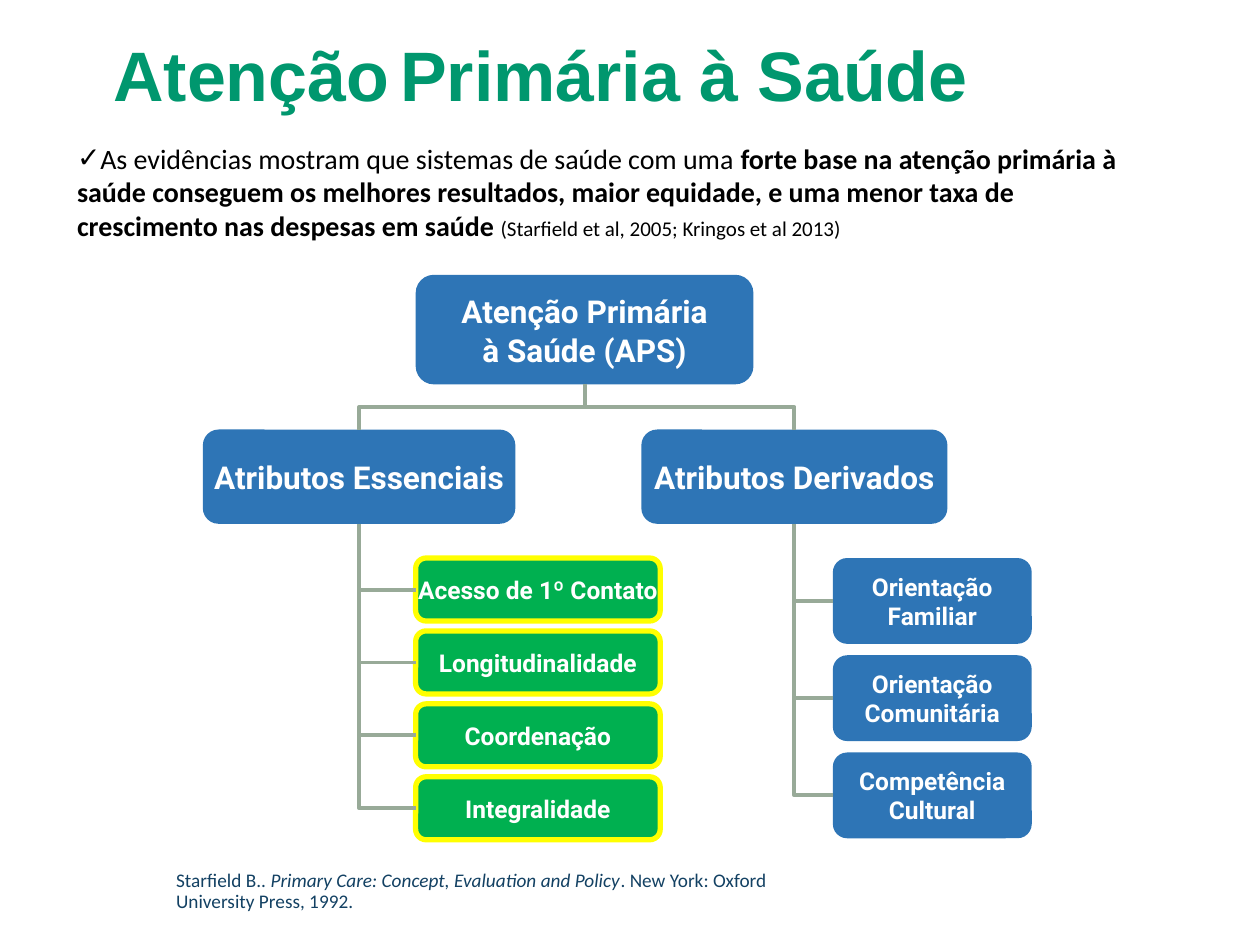
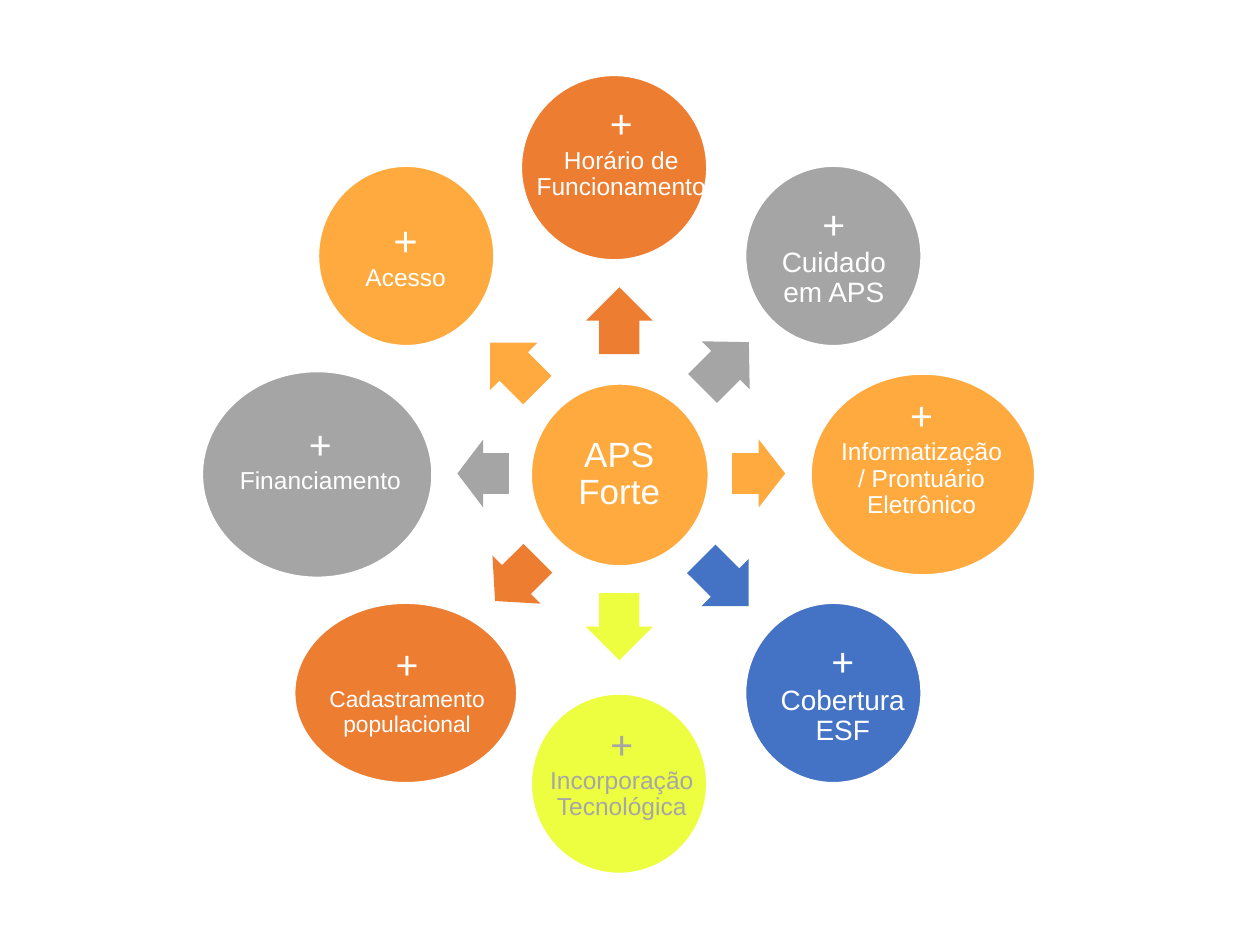
from dataclasses import dataclass
from typing import Any, NamedTuple

from lxml import etree
from pptx import Presentation
from pptx import util as u
from pptx.dml.color import RGBColor
from pptx.enum import shapes, text
from pptx.oxml import ns

COLORS = {
    "green_title": "00976E",
    "blue_box": "2E75B6",
    "green_box": "00B050",
    "yellow_line": "FFFF00",
    "branch": "98AA98",
    "citation": "134163",
    "black": "000000",
    "white": "FFFFFF",
    "amber": "FFAA3F",
    "orange": "ED7D31",
    "gray": "A5A5A5",
    "blue": "4472C4",
    "lime": "EDFD40",
    "gray_text": "A6A6A6",
}
CENTER = {"alignment": text.PP_ALIGN.CENTER}
TIGHT_CENTER = {**CENTER, "line_spacing": 0.9}


class Box(NamedTuple):
    left: float
    top: float
    width: float
    height: float

    def lengths(self) -> list[u.Length]:
        return [u.Cm(value) for value in self]


class Style(NamedTuple):
    size: float
    name: str
    color: str = "white"
    bold: bool = False
    italic: bool = False


class Run(NamedTuple):
    words: str
    style: Style


@dataclass
class Spoke:
    label: str
    color: str
    arrow: Box
    circle: Box
    label_box: Box
    size: float = 14
    plus_font: str = "Calibri"
    text_color: str = "white"


BRANCH_TITLE = Style(18, "Roboto", bold=True)
ATTRIBUTE = Style(14, "Roboto", bold=True)
TITLE = Style(40, "Arial", "green_title", bold=True)
EVIDENCE = Style(16, "Calibri", "black")
CITATION = Style(11, "Calibri", "citation")

ESSENTIAL = ["Acesso de 1º Contato", "Longitudinalidade", "Coordenação", "Integralidade"]
DERIVED = ["Orientação\nFamiliar", "Orientação\nComunitária", "Competência\nCultural"]

SPOKES = [
    Spoke("Horário de Funcionamento", "orange", Box(11.81, 5.79, 1.35, 1.35),
          Box(10.49, 1.5, 3.78, 3.76), Box(10.72, 1.5, 3.61, 3.12)),
    Spoke("Cuidado em APS", "gray", Box(13.97, 6.68, 1.32, 1.37),
          Box(15.01, 3.33, 3.58, 3.66), Box(15.54, 3.86, 2.54, 2.59), size=16),
    Spoke("Informatização / Prontuário Eletrônico", "amber", Box(14.76, 8.86, 1.07, 1.37),
          Box(16.33, 7.52, 4.55, 4.09), Box(16.79, 7.72, 3.58, 2.97)),
    Spoke("Cobertura ESF", "blue", Box(13.94, 11.07, 1.35, 1.35),
          Box(15.01, 12.14, 3.58, 3.66), Box(15.54, 12.67, 2.9, 2.62), size=16),
    Spoke("Incorporação Tecnológica", "lime", Box(11.81, 11.96, 1.35, 1.35),
          Box(10.69, 13.97, 3.58, 3.66), Box(10.82, 14.27, 3.43, 2.59), text_color="gray_text"),
    Spoke("Cadastramento populacional", "orange", Box(9.8, 11, 1.22, 1.37),
          Box(5.92, 12.14, 4.52, 3.66), Box(6.4, 12.67, 3.61, 2.49), size=13),
    Spoke("Financiamento", "gray", Box(9.22, 8.86, 1.04, 1.37),
          Box(4.06, 7.47, 4.67, 4.19), Box(4.67, 7.77, 3.58, 2.97)),
    Spoke("Acesso", "amber", Box(9.68, 6.71, 1.35, 1.35),
          Box(6.4, 3.33, 3.58, 3.66), Box(6.91, 3.86, 2.54, 2.59), plus_font="Arial"),
]


def rgb(name: str) -> RGBColor:
    return RGBColor.from_string(COLORS[name])


def apply(target: Any, values: dict[str, Any]) -> None:
    for name, value in values.items():
        setattr(target, name, value)


def place(shape: Any, box: Box) -> None:
    apply(shape, dict(zip(Box._fields, box.lengths())))


def write(frame: Any, paragraphs: list[list[Run]], paragraph_format: dict[str, Any]) -> None:
    for index, runs in enumerate(paragraphs):
        paragraph = frame.paragraphs[0] if index == 0 else frame.add_paragraph()
        apply(paragraph, paragraph_format)
        for words, style in runs:
            run = paragraph.add_run()
            run.text = words
            apply(run.font, {"size": u.Pt(style.size), "name": style.name,
                             "bold": style.bold, "italic": style.italic})
            run.font.color.rgb = rgb(style.color)


def add_filled(slide: Any, preset: Any, box: Box, fill: str,
               line: str | None = None, line_width: float = 0) -> Any:
    shape = slide.shapes.add_shape(preset, *box.lengths())
    shape.shadow.inherit = False
    shape.fill.solid()
    shape.fill.fore_color.rgb = rgb(fill)
    if line:
        shape.line.color.rgb = rgb(line)
        shape.line.width = u.Pt(line_width)
    else:
        shape.line.fill.background()
    return shape


def add_textbox(slide: Any, box: Box, paragraphs: list[list[Run]],
                paragraph_format: dict[str, Any], frame_format: dict[str, Any]) -> None:
    frame = slide.shapes.add_textbox(*box.lengths()).text_frame
    apply(frame, {"word_wrap": True, **frame_format})
    write(frame, paragraphs, paragraph_format)


def centered_frame(margin: float) -> dict[str, Any]:
    sides = ("left", "top", "right", "bottom")
    return {"vertical_anchor": text.MSO_ANCHOR.MIDDLE,
            **{f"margin_{side}": u.Cm(margin) for side in sides}}


def add_tree_box(slide: Any, box: Box, label: str, style: Style,
                 fill: str = "blue_box", line: str | None = None) -> Any:
    shape = add_filled(slide, shapes.MSO_SHAPE.ROUNDED_RECTANGLE, box, fill, line, 3)
    apply(shape.text_frame, {"word_wrap": False, "vertical_anchor": text.MSO_ANCHOR.MIDDLE})
    write(shape.text_frame, [[Run(words, style)] for words in label.split("\n")], CENTER)
    return shape


def add_elbow(slide: Any, start: tuple[int, int], end: tuple[int, int],
              rotation: int, preset: str) -> Any:
    connector = slide.shapes.add_connector(shapes.MSO_CONNECTOR.ELBOW, *start, *end)
    connector.line.color.rgb = rgb("branch")
    connector.line.width = u.Pt(2.25)
    properties = connector._element.spPr
    properties.xfrm.set("rot", str(rotation * 60000))
    properties.find(ns.qn("a:prstGeom")).set("prst", preset)
    etree.SubElement(properties, ns.qn("a:effectLst"))
    return connector


def bottom_middle(shape: Any) -> tuple[int, int]:
    return shape.left + shape.width // 2, shape.top + shape.height


def join_below(slide: Any, parent: Any, child: Any) -> None:
    start_x, start_y = bottom_middle(parent)
    end_x, end_y = child.left + child.width // 2, child.top
    to_right = end_x > start_x
    connector = add_elbow(slide, (start_x, start_y), (end_x, end_y),
                          270 if to_right else 90, "bentConnector3")
    across, down = abs(end_x - start_x), end_y - start_y
    apply(connector, {"left": (start_x + end_x - down) // 2,
                      "top": (start_y + end_y - across) // 2,
                      "width": down, "height": across})
    transform = connector._element.spPr.xfrm
    transform.set("flipH", "1" if to_right else "0")


def join_beside(slide: Any, parent: Any, child: Any) -> None:
    add_elbow(slide, bottom_middle(parent), (child.left, child.top + child.height // 2),
              180, "bentConnector2")


def add_branch(slide: Any, root: Any, branch: Any, labels: list[str], first: Box,
               pitch: float, fill: str, line: str | None) -> None:
    join_below(slide, root, branch)
    for index, label in enumerate(labels):
        box = first._replace(top=first.top + index * pitch)
        join_beside(slide, branch, add_tree_box(slide, box, label, ATTRIBUTE, fill, line))


def fill_evidence(body: Any) -> None:
    place(body, Box(1.3, 2.72, 21.59, 2.31))
    frame = body.text_frame
    apply(frame, {"word_wrap": True, "auto_size": text.MSO_AUTO_SIZE.NONE})
    properties = frame.paragraphs[0]._p.get_or_add_pPr()
    properties.set("marL", "0")
    properties.set("indent", "0")
    etree.SubElement(properties, ns.qn("a:buFont")).set("typeface", "Arial")
    etree.SubElement(properties, ns.qn("a:buChar")).set("char", "✓")
    write(frame, [[
        Run("As evidências mostram que sistemas de saúde com uma ", EVIDENCE),
        Run("forte base na atenção primária à saúde conseguem os melhores resultados, "
            "maior equidade, e uma menor taxa de crescimento nas despesas em saúde ",
            EVIDENCE._replace(bold=True)),
        Run("(Starfield et al, 2005; Kringos et al 2013)", EVIDENCE._replace(size=12)),
    ]], {"space_before": u.Pt(0)})


def build_attributes(presentation: Any) -> None:
    slide = presentation.slides.add_slide(presentation.slide_layouts[1])
    title, body = slide.placeholders
    place(title, Box(2.03, 0.51, 21.79, 1.96))
    title.text_frame.vertical_anchor = text.MSO_ANCHOR.MIDDLE
    write(title.text_frame, [[Run("Atenção", TITLE), Run(" ", Style(28, "Calibri")),
                              Run("Primária à Saúde", TITLE)]],
          {"alignment": text.PP_ALIGN.JUSTIFY})
    fill_evidence(body)

    root = add_tree_box(slide, Box(8.38, 5.54, 6.81, 2.21),
                        "Atenção Primária\nà Saúde (APS)", BRANCH_TITLE)
    apply(root.text_frame, {"vertical_anchor": text.MSO_ANCHOR.TOP, "margin_top": u.Cm(0.25)})
    apply(root.text_frame.paragraphs[1], {"line_spacing": 0.7, "space_before": u.Pt(6.3)})
    essential = add_tree_box(slide, Box(4.09, 8.66, 6.3, 1.9),
                             "Atributos Essenciais", BRANCH_TITLE)
    derived = add_tree_box(slide, Box(12.93, 8.66, 6.17, 1.9),
                           "Atributos Derivados", BRANCH_TITLE)
    add_branch(slide, root, essential, ESSENTIAL, Box(8.38, 11.25, 4.93, 1.27),
               1.47, "green_box", "yellow_line")
    add_branch(slide, root, derived, DERIVED, Box(16.79, 11.25, 4.01, 1.73),
               1.96, "blue_box", None)

    add_textbox(slide, Box(3.3, 17.42, 12.8, 1.12), [[
        Run("Starfield B.. ", CITATION),
        Run("Primary Care: Concept, Evaluation and Policy", CITATION._replace(italic=True)),
        Run(". New York: Oxford University Press, 1992.", CITATION),
    ]], {"line_spacing": u.Pt(12)}, {})


def build_wheel(presentation: Any) -> None:
    slide = presentation.slides.add_slide(presentation.slide_layouts[6])
    oval = shapes.MSO_SHAPE.OVAL
    add_filled(slide, oval, Box(10.69, 7.72, 3.61, 3.71), "amber", "white", 2)
    add_textbox(slide, Box(11.2, 8.26, 2.57, 2.62), [[Run("APS Forte", Style(20, "Arial"))]],
                TIGHT_CENTER, centered_frame(0.08))
    for index, spoke in enumerate(SPOKES):
        arrow = add_filled(slide, shapes.MSO_SHAPE.RIGHT_ARROW, spoke.arrow, spoke.color)
        arrow.rotation = (270 + index * 360 / len(SPOKES)) % 360
        arrow.adjustments[0] = 0.6
        add_filled(slide, oval, spoke.circle, spoke.color, "white", 2)
        add_textbox(slide, spoke.label_box, [
            [Run("+", Style(24, spoke.plus_font, spoke.text_color))],
            [Run(spoke.label, Style(spoke.size, "Arial", spoke.text_color))],
        ], TIGHT_CENTER, centered_frame(0.05))


def main() -> None:
    presentation = Presentation()
    presentation.slide_width = u.Cm(25.4)
    presentation.slide_height = u.Cm(19.05)
    build_attributes(presentation)
    build_wheel(presentation)
    presentation.save("out.pptx")


if __name__ == "__main__":
    main()
